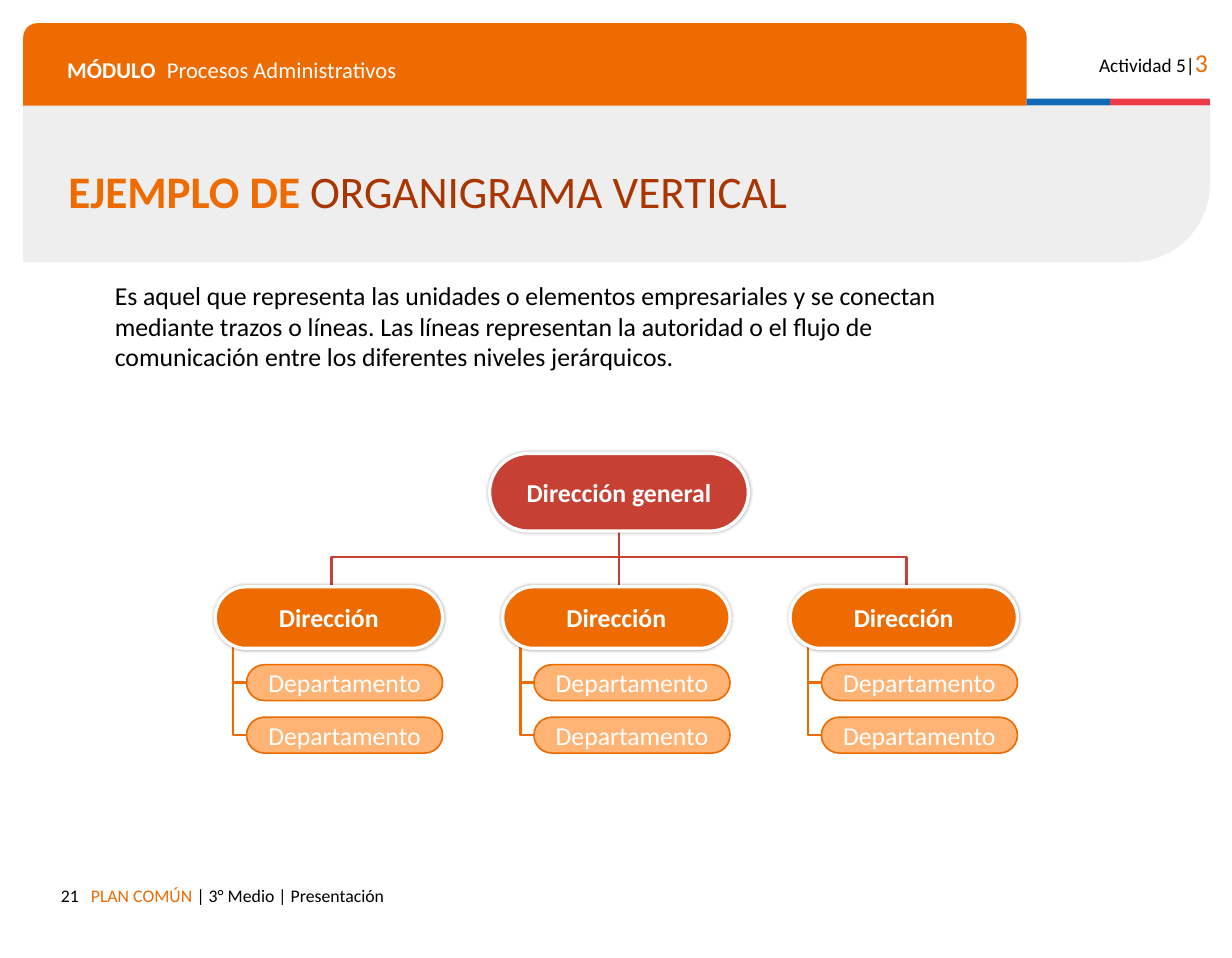
from lxml import etree
from pptx import Presentation
from pptx import util as u
from pptx.dml import color
from pptx.enum import shapes, text
from pptx.oxml import ns

Pt = u.Pt
KIND = shapes.MSO_SHAPE
ALIGN = text.PP_ALIGN
ANCHOR = text.MSO_ANCHOR
FONT = "Calibri"
BLACK, WHITE, ORANGE, RED, PEACH = "000000", "FFFFFF", "ED6B00", "C64033", "FFB375"

# Content: runs are (words, size, colour, bold)
TITLE = [("EJEMPLO DE ", 28, ORANGE, True), ("ORGANIGRAMA VERTICAL", 28, "A93501", False)]
MODULE = [("MÓDULO", 14, WHITE, True), ("\tProcesos Administrativos", 14, WHITE, False)]
LABELS = [  # box, alignment, inset, runs
    ((664.6, 21.6, 92.2, 31), ALIGN.RIGHT, 7.2,
     [("Actividad 5|", 12, BLACK, False), ("3", 16, ORANGE, False)]),
    ((49.3, 542.2, 514, 25.2), ALIGN.LEFT, 7.2,
     [("PLAN COMÚN ", 11, ORANGE, False), ("| 3° Medio | Presentación", 11, BLACK, False)]),
    ((29.5, 542.2, 26.6, 25.2), ALIGN.RIGHT, 7.2, [("21", 11, BLACK, False)]),
    ((67.7, 169.9, 520.6, 63.4), ALIGN.LEFT, 3.6,
     [("Es aquel que representa las unidades o elementos empresariales y se conectan "
       "mediante trazos o líneas. Las líneas representan la autoridad o el flujo de "
       "comunicación entre los diferentes niveles jerárquicos.", 16, BLACK, False)]),
]
HEAD = "Dirección general"
TEAMS = [("Dirección", ["Departamento", "Departamento"])] * 3

prs = Presentation()
prs.slide_width, prs.slide_height = Pt(764.64), Pt(594.72)
slide = prs.slides.add_slide(prs.slide_layouts[5])
parts = slide.shapes


def hue(code):
    return color.RGBColor.from_string(code)


def write(frame, runs, align, inset, anchor=ANCHOR.TOP):
    frame.word_wrap = True
    frame.auto_size = text.MSO_AUTO_SIZE.NONE
    frame.vertical_anchor = anchor
    frame.margin_left = frame.margin_right = Pt(inset)
    frame.margin_top = frame.margin_bottom = Pt(inset)
    para = frame.paragraphs[0]
    para.alignment = align
    for words, size, tint, bold in runs:
        run = para.add_run()
        run.text = words
        font = run.font
        font.name, font.size, font.bold = FONT, Pt(size), bold
        font.color.rgb = hue(tint)
    return para


def label(box, runs, align, inset):
    area = parts.add_textbox(*map(Pt, box))
    return write(area.text_frame, runs, align, inset)


def block(kind, box, fill, *bends):
    shape = parts.add_shape(kind, *map(Pt, box))
    shape.shadow.inherit = False
    shape.fill.solid()
    shape.fill.fore_color.rgb = hue(fill)
    shape.line.fill.background()
    for i, bend in enumerate(bends):
        shape.adjustments[i] = bend
    return shape


def pill(box, words, fill, edge, width, bold):
    shape = block(KIND.ROUNDED_RECTANGLE, box, fill, 0.5)
    shape.line.color.rgb = hue(edge)
    shape.line.width = Pt(width)
    write(shape.text_frame, [(words, 16, WHITE, bold)], ALIGN.CENTER, 3.6, ANCHOR.MIDDLE)
    return shape


def glow(shape):
    effects = shape.element.spPr.find(ns.qn("a:effectLst"))
    soft = etree.SubElement(effects, ns.qn("a:outerShdw"), blurRad=str(Pt(2)), dist="0", dir="0")
    tint = etree.SubElement(soft, ns.qn("a:srgbClr"), val=BLACK)
    etree.SubElement(tint, ns.qn("a:alpha"), val="28000")


def stroke(line, tint):
    line.color.rgb = hue(tint)
    line.width = Pt(1.5)


def bent(points, tint):
    spots = [(Pt(x), Pt(y)) for x, y in points]
    maker = parts.build_freeform(*spots[0])
    maker.add_line_segments(spots[1:], close=False)
    shape = maker.convert_to_shape()
    shape.shadow.inherit = False
    shape.fill.background()
    stroke(shape.line, tint)


def link(start, end, tint):
    line = parts.add_connector(shapes.MSO_CONNECTOR.STRAIGHT, *map(Pt, start + end))
    etree.SubElement(line.element.spPr, ns.qn("a:effectLst"))
    stroke(line.line, tint)
    return line


# Header: the grey band is turned so its round corner is bottom right
left, top, wide, high = 14.4, 65.5, 736.6, 97.2
band = block(KIND.ROUND_1_RECTANGLE,
             (left + (wide - high) / 2, top + (high - wide) / 2, high, wide), "EEEEEE", 0.5)
band.rotation = 90
block(KIND.ROUND_2_SAME_RECTANGLE, (left, 14.4, 622.8, 51.1), ORANGE, 0.17, 0)
block(KIND.RECTANGLE, (637.2, 61.2, 51.8, 4.3), "0F69B4")
block(KIND.RECTANGLE, (689, 61.2, 62, 4.3), "EB3C46")

# Title, moved in front of the band
title = parts.title
title.left, title.top, title.width, title.height = map(Pt, (35.3, 100.1, 476.6, 42.5))
write(title.text_frame, TITLE, ALIGN.LEFT, 7.2, ANCHOR.MIDDLE).line_spacing = 0.8
band.element.getparent().append(title.element)

# Module name, with a tab stop after its first word
para = label((34.6, 27.4, 586, 29.5), MODULE, ALIGN.LEFT, 7.2)
tabs = etree.SubElement(para._p.get_or_add_pPr(), ns.qn("a:tabLst"))
etree.SubElement(tabs, ns.qn("a:tab"), pos=str(Pt(61.9)), algn="l")

for box, align, inset, runs in LABELS:
    label(box, runs, align, inset)

# Chart: top level and the lines down from it
mid, step, bus, drop = 384.2, 178.4, 345.6, 382.3
axes = [mid + step * (i - (len(TEAMS) - 1) / 2) for i in range(len(TEAMS))]
bent([(axes[0], drop), (axes[0], bus), (axes[-1], bus), (axes[-1], drop)], RED)
trunk = link((mid, 329.8), (mid, drop), RED)
head = pill((mid - 80.3, 281.5, 160.6, 48.2), HEAD, RED, WHITE, 2, True)
glow(head)
trunk.begin_connect(head, 2)

# Teams: one column each
first, gap, tall = 412.6, 32.6, 22.3
for axis, (name, units) in zip(axes, TEAMS):
    stem, edge = axis - 61.2, axis - 52.8
    tops = [first + gap * i for i in range(len(units))]
    last = tops[-1] + tall / 2
    bent([(stem, 378), (stem, last), (edge, last)], ORANGE)
    lead = pill((axis - 72.2, 364.3, 141.1, 38.2), name, ORANGE, WHITE, 2, True)
    glow(lead)
    for i, (unit, y) in enumerate(zip(units, tops)):
        node = pill((edge, y, 121.7, tall), unit, PEACH, ORANGE, 1, False)
        if i < len(units) - 1:
            level = y + tall / 2
            link((stem, level), (edge, level), ORANGE).end_connect(node, 1)

prs.save("out.pptx")
